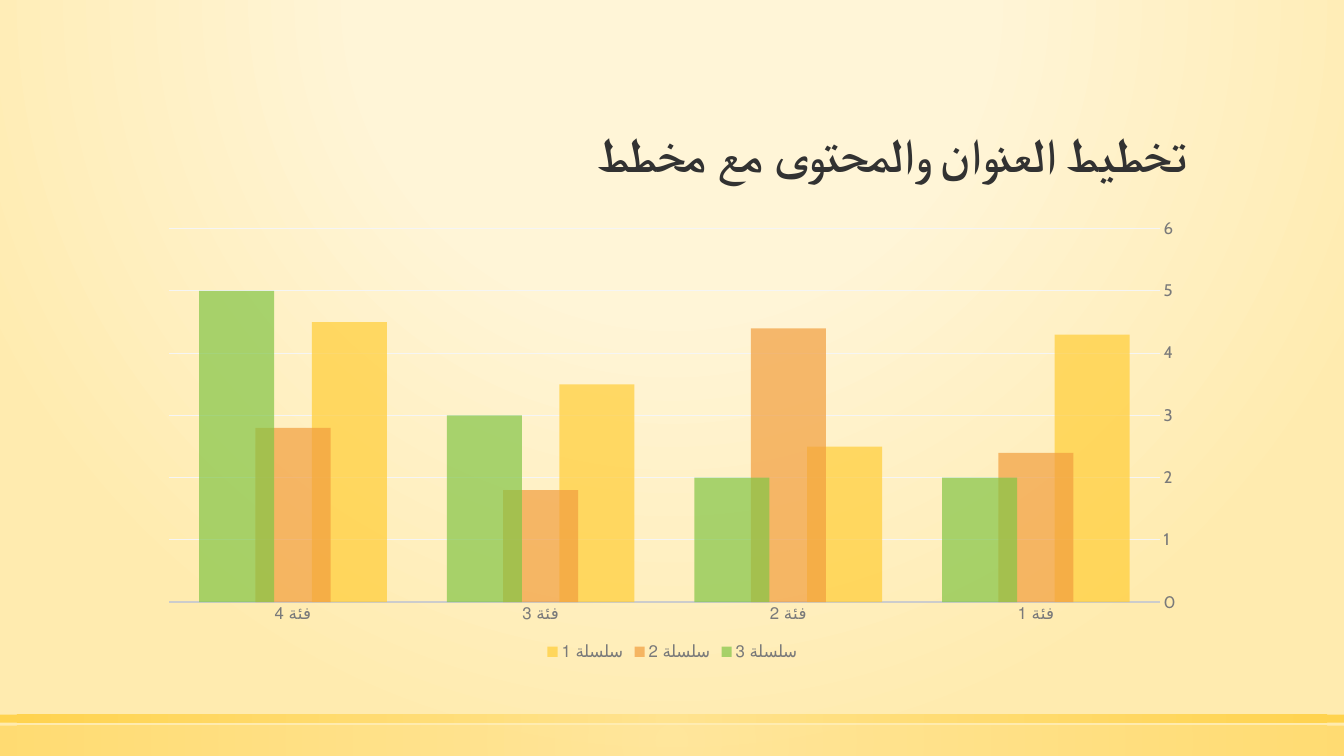
from dataclasses import dataclass

from lxml import etree
from pptx import Presentation
from pptx.chart.data import CategoryChartData
from pptx.dml.color import RGBColor
from pptx.enum.chart import XL_CHART_TYPE, XL_LEGEND_POSITION, XL_TICK_MARK
from pptx.enum.shapes import MSO_SHAPE
from pptx.enum.text import MSO_ANCHOR, PP_ALIGN
from pptx.oxml.ns import qn
from pptx.util import Inches, Pt

COLUMNS = XL_CHART_TYPE.COLUMN_CLUSTERED
LEGEND_BOTTOM = XL_LEGEND_POSITION.BOTTOM
NO_TICK = XL_TICK_MARK.NONE
RECTANGLE = MSO_SHAPE.RECTANGLE
ANCHOR_BOTTOM = MSO_ANCHOR.BOTTOM
ALIGN_RIGHT = PP_ALIGN.RIGHT


@dataclass(frozen=True)
class Theme:
    font: str = "Cabin"
    title_size: int = 34
    chart_size: int = 10
    label_size: int = 12
    ink: str = "323232"
    label: str = "7A7A7A"
    axis: str = "CCCCCC"
    grid: str = "F5F5F5"
    cream: str = "FFF5D7"
    sand: str = "FFEBAF"
    light_gold: str = "FFE186"
    gold: str = "FFCD36"
    orange: str = "F29E3E"
    green: str = "83C546"
    column_opacity: int = 70


class SlideBuilder:
    def __init__(self, page, theme):
        self.page = page
        self.theme = theme

    def style_font(self, font, size, color, bold=False):
        font.name = self.theme.font
        font.size = Pt(size)
        font.bold = bold
        font.color.rgb = RGBColor.from_string(color)

    def set_opacity(self, color_element, percent):
        etree.SubElement(color_element, qn("a:alpha"), val=str(percent * 1000))

    def radial_gradient(self, fill, owner, stops, focus):
        """Give owner a circular gradient; stops are (position, colour, opacity)."""
        fill.gradient()
        gradient = owner.find(".//" + qn("a:gradFill"))
        for child in list(gradient):
            gradient.remove(child)
        stop_list = etree.SubElement(gradient, qn("a:gsLst"))
        for position, color, opacity in stops:
            stop = etree.SubElement(stop_list, qn("a:gs"), pos=str(position * 1000))
            value = etree.SubElement(stop, qn("a:srgbClr"), val=color)
            if opacity < 100:
                self.set_opacity(value, opacity)
        circle = etree.SubElement(gradient, qn("a:path"), path="circle")
        sides = {side: str(percent * 1000) for side, percent in zip("ltrb", focus)}
        etree.SubElement(circle, qn("a:fillToRect"), **sides)

    def background(self):
        theme = self.theme
        stops = [(0, theme.cream, 59), (40, theme.cream, 66), (100, theme.sand, 100)]
        self.radial_gradient(self.page.background.fill, self.page.element,
                             stops, (50, -80, 50, 180))

    def band(self, top, height, opacity):
        band = self.page.shapes.add_shape(
            RECTANGLE, 0, Inches(top), Inches(13.33), Inches(height))
        band.shadow.inherit = False
        band.line.fill.background()
        stops = [(0, self.theme.light_gold, opacity), (100, self.theme.gold, opacity)]
        self.radial_gradient(band.fill, band.element, stops, (50, 50, 50, 50))

    def title(self, text, left, top, width, height):
        box = self.page.shapes.add_textbox(
            Inches(left), Inches(top), Inches(width), Inches(height))
        frame = box.text_frame
        frame.word_wrap = True
        frame.vertical_anchor = ANCHOR_BOTTOM
        para = frame.paragraphs[0]
        para.alignment = ALIGN_RIGHT
        para.line_spacing = 0.9
        para._p.get_or_add_pPr().set("rtl", "1")
        span = para.add_run()
        span.text = text
        self.style_font(span.font, self.theme.title_size, self.theme.ink, bold=True)
        etree.SubElement(span.font._element, qn("a:cs"), typeface=self.theme.font)

    def column_chart(self, categories, series, left, top, width, height):
        """Draw right-to-left columns; series are (name, colour, values)."""
        theme = self.theme
        data = CategoryChartData()
        data.categories = categories
        for name, _, values in series:
            data.add_series(name, values)
        chart = self.page.shapes.add_chart(
            COLUMNS, Inches(left), Inches(top), Inches(width), Inches(height), data).chart
        self.style_font(chart.font, theme.chart_size, theme.ink)
        chart.has_title = False
        chart.has_legend = True
        chart.legend.position = LEGEND_BOTTOM
        chart.legend.include_in_layout = False
        self.style_font(chart.legend.font, theme.label_size, theme.label)

        plot = chart.plots[0]
        plot.gap_width = 80
        plot.overlap = 25
        plot.vary_by_categories = False
        for columns, (_, color, _) in zip(plot.series, series):
            columns.invert_if_negative = False
            columns.format.fill.solid()
            columns.format.fill.fore_color.rgb = RGBColor.from_string(color)
            self.set_opacity(columns._element.find(".//" + qn("a:srgbClr")),
                             theme.column_opacity)

        for axis in (chart.category_axis, chart.value_axis):
            axis.major_tick_mark = NO_TICK
            axis.minor_tick_mark = NO_TICK
            self.style_font(axis.tick_labels.font, theme.label_size, theme.label)
        chart.category_axis.reverse_order = True
        self.style_line(chart.category_axis.format.line, theme.axis, 1.25)

        value_axis = chart.value_axis
        value_axis.minimum_scale = 0
        value_axis.maximum_scale = 6
        value_axis.major_unit = 1
        value_axis.format.line.fill.background()
        value_axis.has_major_gridlines = True
        self.style_line(value_axis.major_gridlines.format.line, theme.grid, 0.75)

    def style_line(self, line, color, width):
        line.color.rgb = RGBColor.from_string(color)
        line.width = Pt(width)


def main():
    deck = Presentation()
    deck.slide_width = Inches(13.33)
    deck.slide_height = Inches(7.5)
    theme = Theme()
    builder = SlideBuilder(deck.slides.add_slide(deck.slide_layouts[6]), theme)

    builder.background()
    builder.band(top=7.2, height=0.3, opacity=50)
    builder.band(top=7.09, height=0.08, opacity=80)
    builder.title("تخطيط العنوان والمحتوى مع مخطط", 1.47, 0.51, 10.4, 1.35)
    builder.column_chart(
        [f"فئة {number}" for number in range(1, 5)],
        [("سلسلة 1", theme.gold, (4.3, 2.5, 3.5, 4.5)),
         ("سلسلة 2", theme.orange, (2.4, 4.4, 1.8, 2.8)),
         ("سلسلة 3", theme.green, (2, 2, 3, 5))],
        1.47, 2.08, 10.4, 4.51)
    deck.save("out.pptx")


if __name__ == "__main__":
    main()
